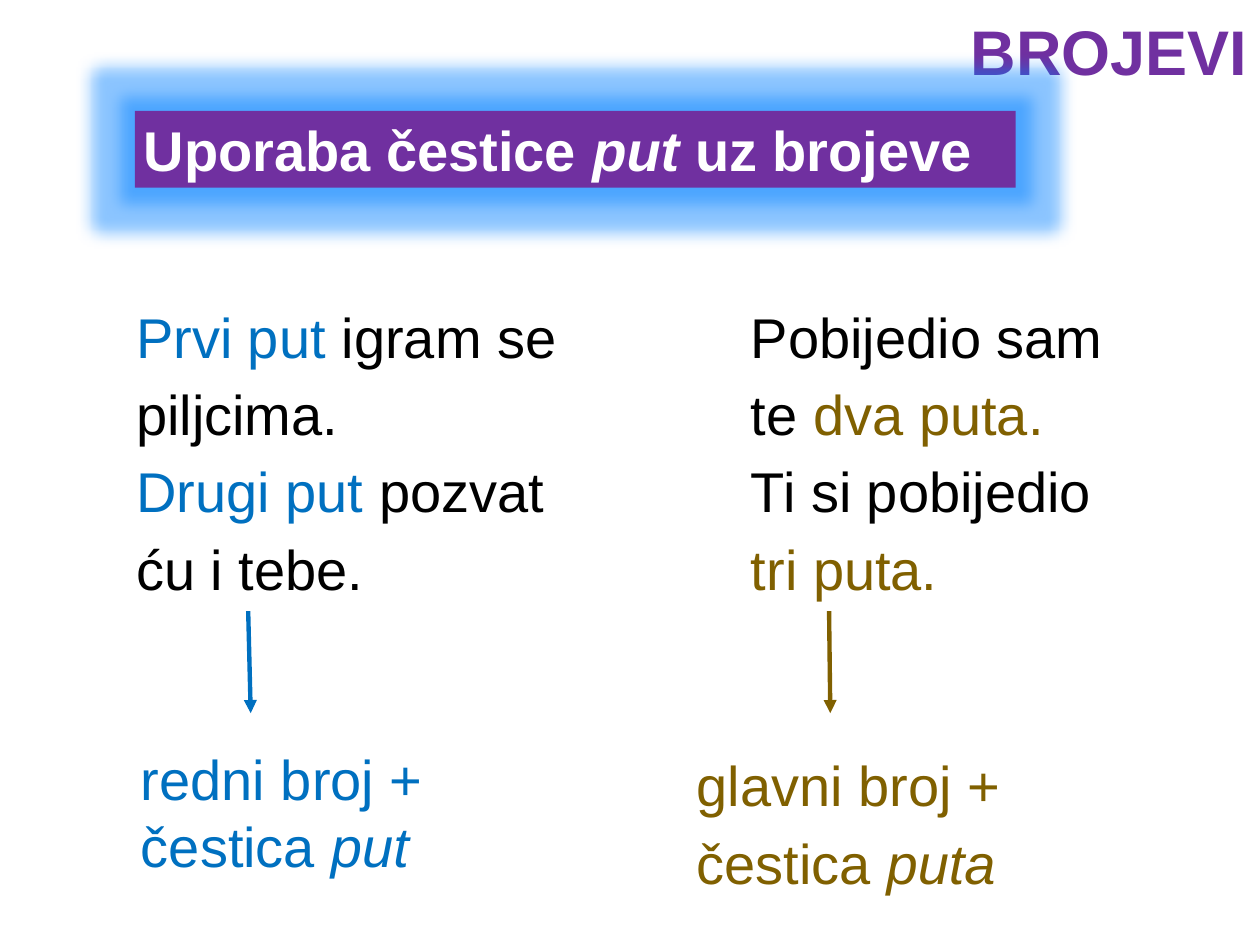
import pptx
import pptx.dml.color
import pptx.enum.dml
import pptx.enum.shapes
import pptx.enum.text
import pptx.oxml
import pptx.oxml.ns
import pptx.util
from pptx.util import Inches

RGBColor = pptx.dml.color.RGBColor
PURPLE = RGBColor(0x70, 0x30, 0xA0)
BLUE = RGBColor(0x00, 0x70, 0xC0)
OLIVE = RGBColor(0x80, 0x60, 0x00)
BLACK = RGBColor(0x00, 0x00, 0x00)
WHITE = RGBColor(0xFF, 0xFF, 0xFF)
TWO_CONTENT_LAYOUT = 3
ALIGN = pptx.enum.text.PP_ALIGN
ANCHOR = pptx.enum.text.MSO_ANCHOR


def place(shape, left, top, width, height):
    shape.left, shape.top = Inches(left), Inches(top)
    shape.width, shape.height = Inches(width), Inches(height)


def add_effects(shape, content=""):
    namespace = pptx.oxml.ns.nsdecls("a")
    effects = pptx.oxml.parse_xml(f"<a:effectLst {namespace}>{content}</a:effectLst>")
    shape._element.spPr.append(effects)


def write(shape, paragraphs, size=32, bold=False, align=ALIGN.LEFT,
          anchor=ANCHOR.TOP, spacing=1.0):
    frame = shape.text_frame
    frame.word_wrap = True
    frame.auto_size = pptx.enum.text.MSO_AUTO_SIZE.NONE
    frame.vertical_anchor = anchor
    for index, pieces in enumerate(paragraphs):
        paragraph = frame.add_paragraph() if index else frame.paragraphs[0]
        paragraph.alignment = align
        paragraph.line_spacing = spacing
        paragraph.space_before = pptx.util.Pt(0)
        properties = paragraph._p.get_or_add_pPr()
        properties.set("marL", "0")
        properties.set("indent", "0")
        properties.append(pptx.oxml.parse_xml(
            f"<a:buNone {pptx.oxml.ns.nsdecls('a')}/>"))
        for text, color, *italic in pieces:
            run = paragraph.add_run()
            run.text = text
            run.font.name = "Arial"
            run.font.size = pptx.util.Pt(size)
            run.font.bold = bold
            run.font.italic = bool(italic)
            run.font.color.rgb = color


def add_label(slide, box, pieces, **text_format):
    label = slide.shapes.add_textbox(*map(Inches, box))
    write(label, [pieces], **text_format)
    return label


def add_banner(slide):
    banner = slide.shapes.add_shape(
        pptx.enum.shapes.MSO_SHAPE.RECTANGLE,
        *map(Inches, (1.07, 0.88, 6.99, 0.61)))
    banner.fill.solid()
    banner.fill.fore_color.rgb = PURPLE
    banner.line.fill.background()
    add_effects(banner, '<a:glow rad="228600"><a:srgbClr val="0080FF">'
                        '<a:alpha val="45000"/></a:srgbClr></a:glow>')
    heading = add_label(
        slide, (1.07, 0.83, 6.99, 0.61),
        [("Uporaba čestice ", WHITE), ("put", WHITE, "italic"),
         (" uz brojeve", WHITE)], bold=True)
    frame = heading.text_frame
    frame.margin_left = frame.margin_right = Inches(0.07)
    frame.margin_top, frame.margin_bottom = Inches(0.09), 0


def add_arrow(slide, start_x, end_x, color):
    arrow = slide.shapes.add_connector(
        pptx.enum.shapes.MSO_CONNECTOR.STRAIGHT,
        Inches(start_x), Inches(4.85), Inches(end_x), Inches(5.66))
    arrow.line.color.rgb = color
    arrow.line.width = pptx.util.Pt(2.5)
    arrow.line._get_or_add_ln().append(pptx.oxml.parse_xml(
        f'<a:tailEnd {pptx.oxml.ns.nsdecls("a")} type="triangle"/>'))
    add_effects(arrow)


def main():
    deck = pptx.Presentation()
    deck.slide_width, deck.slide_height = Inches(10), Inches(7.5)
    slide = deck.slides.add_slide(deck.slide_layouts[TWO_CONTENT_LAYOUT])
    title, ordinal_examples, cardinal_examples = slide.placeholders

    place(title, 2.63, 0, 7.37, 0.76)
    write(title, [[("BROJEVI", PURPLE)]], size=36, bold=True,
          align=ALIGN.RIGHT, anchor=ANCHOR.BOTTOM, spacing=0.9)
    add_banner(slide)

    place(ordinal_examples, 0.98, 2.27, 3.87, 2.58)
    write(ordinal_examples, [
        [("Prvi put", BLUE), (" igram se piljcima.", BLACK)],
        [("Drugi put", BLUE), (" pozvat ću i tebe.", BLACK)],
    ], spacing=1.15)
    place(cardinal_examples, 5.86, 2.27, 3.38, 3.2)
    write(cardinal_examples, [
        [("Pobijedio sam te ", BLACK), ("dva puta.", OLIVE)],
        [("Ti si pobijedio ", BLACK), ("tri puta.", OLIVE)],
    ], spacing=1.15)

    add_arrow(slide, 6.58, 6.59, OLIVE)
    add_arrow(slide, 1.97, 1.99, BLUE)
    add_label(slide, (1.02, 5.86, 3.27, 1.18),
              [("redni broj + čestica ", BLUE), ("put", BLUE, "italic")])
    add_label(slide, (5.43, 5.83, 3.11, 1.34),
              [("glavni broj + čestica ", OLIVE), ("puta", OLIVE, "italic")],
              spacing=1.15)
    deck.save("out.pptx")


if __name__ == "__main__":
    main()
